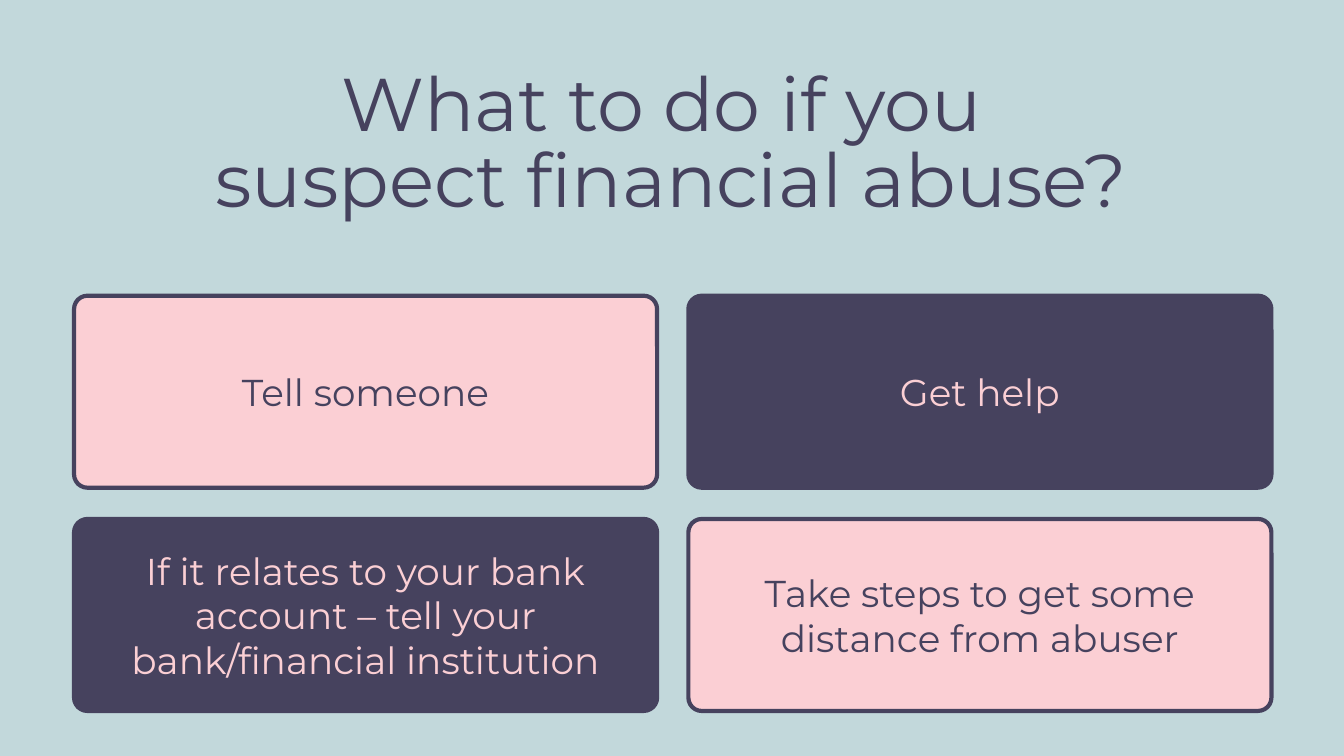
from dataclasses import dataclass

from pptx import Presentation
from pptx.dml.color import RGBColor
from pptx.enum.shapes import MSO_SHAPE as Preset
from pptx.enum.text import MSO_ANCHOR as Anchor, MSO_AUTO_SIZE as AutoSize, PP_ALIGN as Align
from pptx.util import Cm, Pt


@dataclass(frozen=True)
class Theme:
    font: str = "Montserrat"
    background: RGBColor = RGBColor.from_string("C2D8DB")
    dark: RGBColor = RGBColor.from_string("46425E")
    light: RGBColor = RGBColor.from_string("FBCFD4")
    title_size: int = 40
    card_size: int = 20
    border: float = 2.25


@dataclass(frozen=True)
class Box:
    """A region of the page, in centimetres."""
    left: float
    top: float
    width: float
    height: float

    def lengths(self):
        return Cm(self.left), Cm(self.top), Cm(self.width), Cm(self.height)


THEME = Theme()
INSET = Cm(0.25)
STEPS = [
    ["Tell someone", "Get help"],
    ["If it relates to your bank account – tell your bank/financial institution",
     "Take steps to get some distance from abuser"],
]


def write_text(shape, lines, *, size, color, anchor=Anchor.MIDDLE, spacing=None):
    frame = shape.text_frame
    frame.word_wrap = True
    frame.auto_size = AutoSize.NONE
    frame.vertical_anchor = anchor
    frame.margin_left = frame.margin_right = INSET
    frame.margin_top = frame.margin_bottom = INSET
    for index, line in enumerate(lines):
        para = frame.add_paragraph() if index else frame.paragraphs[0]
        para.alignment = Align.CENTER
        para.line_spacing = spacing
        span = para.add_run()
        span.text = line
        span.font.name = THEME.font
        span.font.size = Pt(size)
        span.font.color.rgb = color


def place_title(page, box):
    title = page.shapes.title
    title.left, title.top, title.width, title.height = box.lengths()
    write_text(title, ["What to do if you ", "suspect financial abuse?"],
               size=THEME.title_size, color=THEME.dark, anchor=Anchor.TOP, spacing=0.85)


def place_card(page, box, text, fill, ink):
    card = page.shapes.add_shape(Preset.ROUNDED_RECTANGLE, *box.lengths())
    card.adjustments[0] = 0.07
    card.shadow.inherit = False
    card.fill.solid()
    card.fill.fore_color.rgb = fill
    card.line.color.rgb = THEME.dark
    card.line.width = Pt(THEME.border)
    write_text(card, [text], size=THEME.card_size, color=ink)


def place_steps(page, box, gap=0.59):
    """Fill the box with a grid of cards in alternating colours."""
    width = (box.width - gap * (len(STEPS[0]) - 1)) / len(STEPS[0])
    height = (box.height - gap * (len(STEPS) - 1)) / len(STEPS)
    for row, texts in enumerate(STEPS):
        for column, text in enumerate(texts):
            cell = Box(box.left + column * (width + gap),
                       box.top + row * (height + gap), width, height)
            colors = (THEME.light, THEME.dark)
            fill, ink = colors if (row + column) % 2 == 0 else colors[::-1]
            place_card(page, cell, text, fill, ink)


def main():
    deck = Presentation()
    deck.slide_width, deck.slide_height = Cm(25.4), Cm(14.29)
    page = deck.slides.add_slide(deck.slide_layouts.get_by_name("Title Only"))
    page.background.fill.solid()
    page.background.fill.fore_color.rgb = THEME.background
    place_title(page, Box(2.92, 1.09, 19.53, 3.89))
    place_steps(page, Box(1.4, 5.59, 22.63, 7.85))
    deck.save("out.pptx")


if __name__ == "__main__":
    main()
